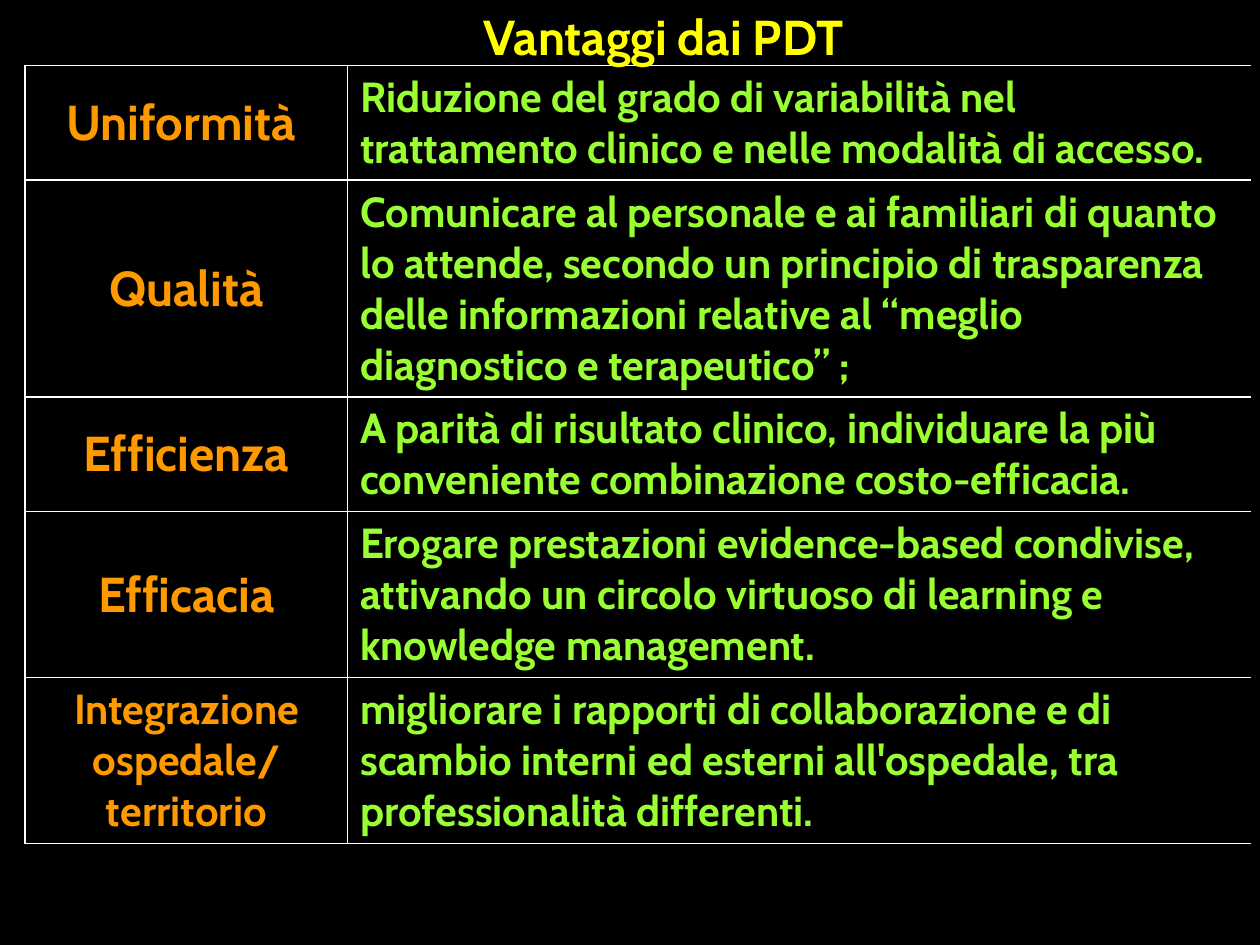
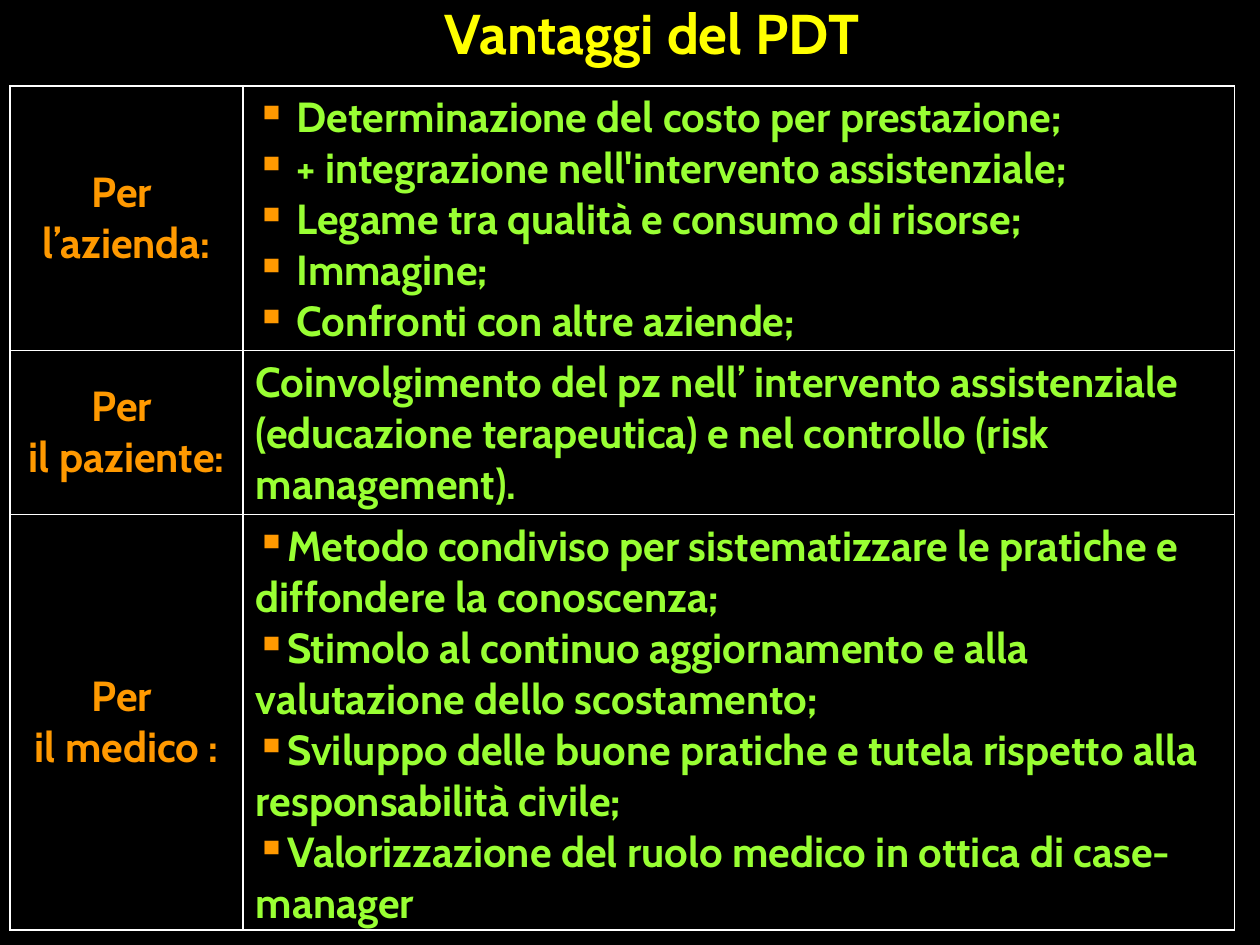
from dataclasses import dataclass

from lxml.etree import SubElement
from pptx import Presentation
from pptx.dml.color import RGBColor
from pptx.enum.text import MSO_ANCHOR as Anchor, MSO_AUTO_SIZE as AutoSize, PP_ALIGN as Align
from pptx.oxml import parse_xml
from pptx.oxml.ns import nsdecls, qn
from pptx.util import Pt


@dataclass(frozen=True)
class Theme:
    font: str = "Cabin"
    background: str = "000000"
    title: str = "FFFF00"
    label: str = "FF9900"
    body: str = "99FF33"
    line: str = "FFFFFF"
    line_width: float = 1
    body_size: int = 24
    large_size: int = 28
    title_size: int = 32


THEME = Theme()
BULLET = "▪"

# Each row: label paragraphs, label size, description paragraphs, bulleted, height
BENEFITS = [
    (["Uniformità "], THEME.large_size,
     ["Riduzione del grado di variabilità nel trattamento clinico e nelle "
      "modalità di accesso."], False, 65),
    (["Qualità"], THEME.large_size,
     ["Comunicare al personale e ai familiari di quanto lo attende, secondo un "
      "principio di trasparenza delle informazioni relative al “meglio "
      "diagnostico e terapeutico” ;"], False, 123),
    (["Efficienza"], THEME.large_size,
     ["A parità di risultato clinico, individuare la più conveniente "
      "combinazione costo-efficacia."], False, 65),
    (["Efficacia"], THEME.large_size,
     ["Erogare prestazioni evidence-based condivise, attivando un circolo "
      "virtuoso di learning e knowledge management."], False, 94),
    (["Integrazione ospedale/ territorio"], THEME.body_size,
     ["migliorare i rapporti di collaborazione e di scambio interni ed esterni "
      "all'ospedale, tra professionalità differenti."], False, 94),
]

BENEFICIARIES = [
    (["Per ", "l’azienda:"], THEME.body_size,
     [" Determinazione del costo per prestazione;",
      " + integrazione nell'intervento assistenziale;",
      " Legame tra qualità e consumo di risorse;",
      " Immagine;",
      " Confronti con altre aziende;"], True, 151),
    (["Per ", "il paziente:"], THEME.body_size,
     ["Coinvolgimento del pz nell’ intervento assistenziale (educazione "
      "terapeutica) e nel controllo (risk management)."], False, 93),
    (["Per ", "il medico :"], THEME.body_size,
     ["Metodo condiviso per sistematizzare le pratiche e diffondere la conoscenza;",
      "Stimolo al continuo aggiornamento e alla valutazione dello scostamento;",
      "Sviluppo delle buone pratiche e tutela rispetto alla responsabilità civile;",
      "Valorizzazione del ruolo medico in ottica di case-manager"], True, 237),
]


# Text
def write(tf, paragraphs, *, color, size=THEME.body_size, align=Align.LEFT, bullet=False):
    for i, text in enumerate(paragraphs):
        p = tf.paragraphs[0] if i == 0 else tf.add_paragraph()
        p.alignment = align
        if bullet:
            add_bullet(p)
        r = p.add_run()
        r.text = text
        r.font.name = THEME.font
        r.font.size = Pt(size)
        r.font.bold = True
        r.font.color.rgb = RGBColor.from_string(color)


def add_bullet(p):
    pPr = p._p.get_or_add_pPr()
    pPr.set("marL", "0")
    pPr.set("indent", "0")
    SubElement(SubElement(pPr, qn("a:buClr")), qn("a:srgbClr"), val=THEME.label)
    SubElement(pPr, qn("a:buChar"), char=BULLET)


# Slide and title
def add_slide(prs):
    s = prs.slides.add_slide(prs.slide_layouts[6])
    s.background.fill.solid()
    s.background.fill.fore_color.rgb = RGBColor.from_string(THEME.background)
    return s


def add_title(s, text, left, top, width, height, size):
    tf = s.shapes.add_textbox(Pt(left), Pt(top), Pt(width), Pt(height)).text_frame
    tf.word_wrap = False
    tf.auto_size = AutoSize.SHAPE_TO_FIT_TEXT
    write(tf, [text], color=THEME.title, size=size)


# Table
def set_borders(cell, sides):
    tcPr = cell._tc.get_or_add_tcPr()
    for i, side in enumerate("LRTB"):
        paint = (f'<a:solidFill><a:srgbClr val="{THEME.line}"/></a:solidFill>'
                 if side in sides else "<a:noFill/>")
        tcPr.insert(i, parse_xml(
            f'<a:ln{side} {nsdecls("a")} w="{Pt(THEME.line_width)}">{paint}</a:ln{side}>'))


def add_benefit_table(s, rows, left, top, widths, text_borders="LRTB"):
    height = sum(row[-1] for row in rows)
    table = s.shapes.add_table(len(rows), len(widths), Pt(left), Pt(top),
                               Pt(sum(widths)), Pt(height)).table
    table.first_row = table.horz_banding = False
    for column, width in zip(table.columns, widths):
        column.width = Pt(width)
    for i, (label, label_size, texts, bulleted, row_height) in enumerate(rows):
        table.rows[i].height = Pt(row_height)
        label_cell, text_cell = table.cell(i, 0), table.cell(i, 1)
        for cell, borders in ((label_cell, "LRTB"), (text_cell, text_borders)):
            cell.fill.background()
            cell.vertical_anchor = Anchor.MIDDLE
            set_borders(cell, borders)
        write(label_cell.text_frame, label, color=THEME.label, size=label_size,
              align=Align.CENTER)
        write(text_cell.text_frame, texts, color=THEME.body, bullet=bulleted)


def main():
    prs = Presentation()
    prs.slide_width, prs.slide_height = Pt(720), Pt(540)

    # Benefits by quality goal
    s = add_slide(prs)
    add_benefit_table(s, BENEFITS, 14.4, 37.4, (184.3, 516.2), text_borders="LTB")
    add_title(s, "Vantaggi dai PDT", 269.3, 0, 256.3, 41, THEME.large_size)

    # Benefits by beneficiary
    s = add_slide(prs)
    add_benefit_table(s, BENEFICIARIES, 5.8, 49, (133.2, 566.6))
    add_title(s, "Vantaggi del PDT", 247, -4.3, 290.2, 45.4, THEME.title_size)

    prs.save("out.pptx")


if __name__ == "__main__":
    main()
